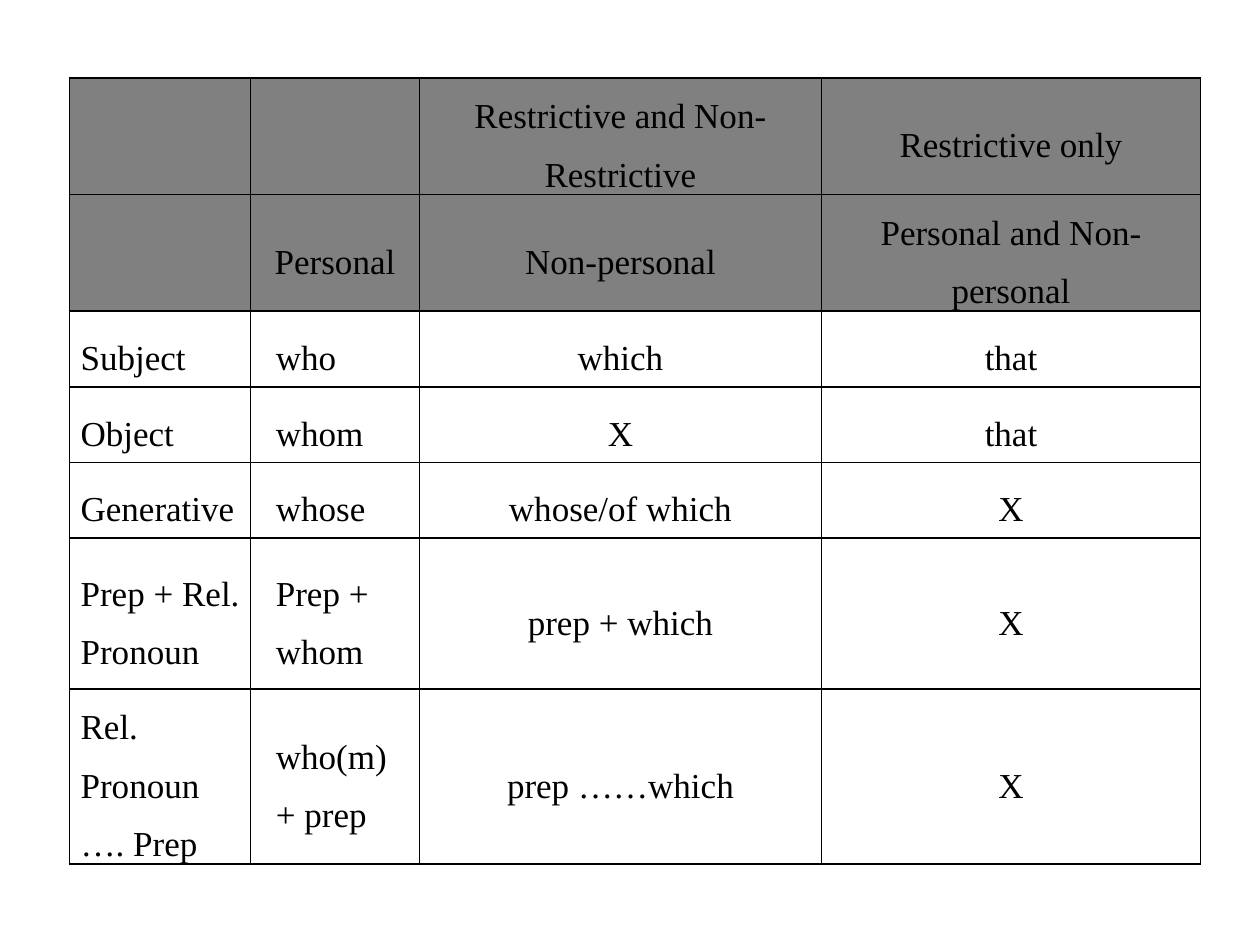
from lxml.etree import SubElement
from pptx import Presentation
from pptx.dml.color import RGBColor
from pptx.enum.text import MSO_ANCHOR, PP_ALIGN
from pptx.oxml.ns import qn
from pptx.util import Inches, Pt

COLS = [1.44, 1.34, 3.19, 3.01]
ROWS = [0.6] * 5 + [1.2] * 2
HEADS = 2
INDENTS = [0.02, 0.13]
CELLS = [
    ["", "", "Restrictive and Non-Restrictive", "Restrictive only"],
    ["", "Personal", "Non-personal", "Personal and Non-personal"],
    ["Subject", "who", "which", "that"],
    ["Object", "whom", "X", "that"],
    ["Generative", "whose", "whose/of which", "X"],
    ["Prep + Rel. Pronoun", "Prep + whom", "prep + which", "X"],
    ["Rel. Pronoun …. Prep", "who(m) + prep", "prep ……which", "X"],
]


def color(code):
    return RGBColor.from_string(code)


def write(frame, text, font, size, ink, indent=None):
    para = frame.paragraphs[0]
    para.line_spacing = 1.5
    para.space_before = para.space_after = Pt(2)
    if indent is None:
        para.alignment = PP_ALIGN.CENTER
    else:
        para.alignment = PP_ALIGN.LEFT
        props = para._p.get_or_add_pPr()
        props.set("marL", str(Inches(indent)))
        props.set("indent", "0")
    run = para.add_run()
    run.text = text
    run.font.name = font
    run.font.size = Pt(size)
    run.font.color.rgb = color(ink)


class Deck:
    font = "Times New Roman"
    size = 20
    ink = "000000"
    shade = "808080"

    def __init__(self):
        self.show = Presentation()
        self.show.slide_width = Inches(10)
        self.show.slide_height = Inches(7.5)
        self.slide = self.show.slides.add_slide(self.show.slide_layouts[6])

    def border(self, cell, side, width):
        props = cell._tc.get_or_add_tcPr()
        line = SubElement(props, qn(f"a:ln{side}"), w=str(Pt(width)))
        fill = SubElement(line, qn("a:solidFill"))
        SubElement(fill, qn("a:srgbClr"), val=self.ink)

    def cell(self, cell, text, head, indent, top, bottom):
        cell.margin_left = cell.margin_right = Inches(0.07)
        cell.margin_top = cell.margin_bottom = 0
        cell.vertical_anchor = MSO_ANCHOR.MIDDLE
        for side, width in zip("LRTB", [1, 1, top, bottom]):
            self.border(cell, side, width)
        if head:
            cell.fill.solid()
            cell.fill.fore_color.rgb = color(self.shade)
        else:
            cell.fill.background()
        if text:
            write(cell.text_frame, text, font=self.font, size=self.size,
                  ink=self.ink, indent=indent)

    def table(self, left, top, width, height):
        frame = self.slide.shapes.add_table(
            len(ROWS), len(COLS), Inches(left), Inches(top),
            Inches(width), Inches(height))
        grid = frame.table
        grid.first_row = grid.horz_banding = False
        for col, size in zip(grid.columns, COLS):
            col.width = Inches(size)
        for row, size in zip(grid.rows, ROWS):
            row.height = Inches(size)
        frame.height = Inches(height)
        for r, texts in enumerate(CELLS):
            head = r < HEADS
            upper = 1.5 if r == HEADS else 1
            lower = 1.5 if r == HEADS - 1 else 1
            for c, text in enumerate(texts):
                left_set = not head and c < len(INDENTS)
                self.cell(grid.cell(r, c), text, head,
                          INDENTS[c] if left_set else None, upper, lower)


def main():
    deck = Deck()
    deck.table(0.55, 0.62, 8.98, 6.49)
    deck.show.save("out.pptx")


if __name__ == "__main__":
    main()
